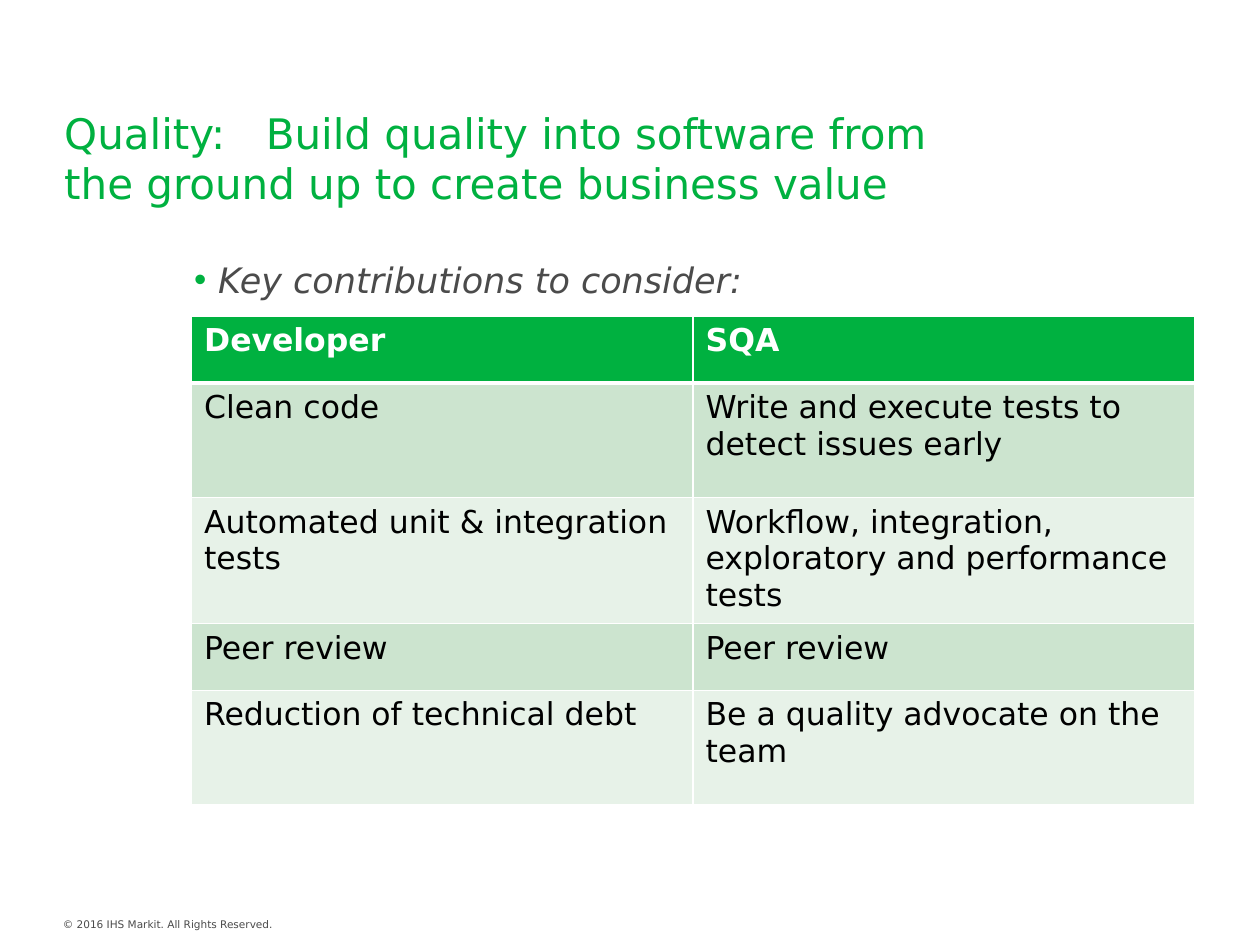
from dataclasses import dataclass

from lxml import etree
from pptx import Presentation
from pptx.dml.color import RGBColor
from pptx.enum.text import MSO_ANCHOR, MSO_AUTO_SIZE, PP_ALIGN
from pptx.oxml.ns import qn
from pptx.util import Inches, Pt

TOP = MSO_ANCHOR.TOP
NO_FIT = MSO_AUTO_SIZE.NONE
LEFT = PP_ALIGN.LEFT


@dataclass(frozen=True)
class Theme:
    font: str = "DejaVu Sans"
    green: str = "00B140"
    gray: str = "4B4B4B"
    white: str = "FFFFFF"
    black: str = "000000"
    bands: tuple = ("CCE4CF", "E7F2E8")
    title_size: int = 24
    body_size: int = 20
    table_size: int = 18
    footer_size: int = 6
    rule: int = 1
    header_rule: int = 3


THEME = Theme()

ROWS = [
    ("Developer", "SQA"),
    ("Clean code", "Write and execute tests to detect issues early"),
    ("Automated unit & integration tests",
     "Workflow, integration, exploratory and performance tests"),
    ("Peer review", "Peer review"),
    ("Reduction of technical debt", "Be a quality advocate on the team"),
]
ROW_HEIGHTS = (0.53, 0.91, 0.91, 0.53, 0.91)


def style(paragraph, size, color, bold=False, italic=False):
    paragraph.alignment = LEFT
    font = paragraph.font
    font.name = THEME.font
    font.size = Pt(size)
    font.color.rgb = RGBColor.from_string(color)
    font.bold = bold
    font.italic = italic


def place(shape, box):
    shape.left, shape.top, shape.width, shape.height = map(Inches, box)


def fill_placeholder(shape, box, text):
    place(shape, box)
    frame = shape.text_frame
    frame.margin_left = frame.margin_right = 0
    frame.margin_top = frame.margin_bottom = 0
    frame.vertical_anchor = TOP
    frame.word_wrap = True
    frame.auto_size = NO_FIT
    frame.text = text
    paragraph = frame.paragraphs[0]
    paragraph.space_before = Pt(0)
    return paragraph


def add_title(page, box):
    paragraph = fill_placeholder(
        page.shapes.title, box,
        "Quality:\tBuild quality into software from the ground up to create business value")
    properties = paragraph._p.get_or_add_pPr()
    stops = etree.SubElement(properties, qn("a:tabLst"))
    etree.SubElement(stops, qn("a:tab"), pos=str(Inches(1.6)), algn="l")
    style(paragraph, THEME.title_size, THEME.green)


def add_lead(page, box):
    paragraph = fill_placeholder(
        page.placeholders[1], box, "Key contributions to consider:")
    properties = paragraph._p.get_or_add_pPr()
    indent = Inches(0.19)
    properties.set("marL", str(indent))
    properties.set("indent", str(-indent))
    color = etree.SubElement(properties, qn("a:buClr"))
    etree.SubElement(color, qn("a:srgbClr"), val=THEME.green)
    etree.SubElement(properties, qn("a:buChar"), char="•")
    style(paragraph, THEME.body_size, THEME.gray, italic=True)


def add_borders(cell, top, bottom):
    properties = cell._tc.get_or_add_tcPr()
    widths = {"L": THEME.rule, "R": THEME.rule, "T": top, "B": bottom}
    for side, width in widths.items():
        line = etree.SubElement(properties, qn(f"a:ln{side}"), w=str(Pt(width)))
        fill = etree.SubElement(line, qn("a:solidFill"))
        etree.SubElement(fill, qn("a:srgbClr"), val=THEME.white)


def add_contributions(page, box):
    frame = page.shapes.add_table(len(ROWS), len(ROWS[0]), *map(Inches, box))
    table = frame.table
    table.horz_banding = False
    for row, height in zip(table.rows, ROW_HEIGHTS):
        row.height = Inches(height)
    for index, texts in enumerate(ROWS):
        header = index == 0
        fill = THEME.green if header else THEME.bands[(index - 1) % 2]
        top = THEME.header_rule if index == 1 else THEME.rule
        bottom = THEME.header_rule if header else THEME.rule
        for column, text in enumerate(texts):
            cell = table.cell(index, column)
            add_borders(cell, top, bottom)
            cell.fill.solid()
            cell.fill.fore_color.rgb = RGBColor.from_string(fill)
            cell.text = text
            style(cell.text_frame.paragraphs[0], THEME.table_size,
                  THEME.white if header else THEME.black, bold=header)


def add_footer(page, box):
    frame = page.shapes.add_textbox(*map(Inches, box)).text_frame
    frame.word_wrap = False
    frame.text = "© 2016 IHS Markit. All Rights Reserved."
    style(frame.paragraphs[0], THEME.footer_size, THEME.gray)


def main():
    deck = Presentation()
    deck.slide_width, deck.slide_height = Inches(10), Inches(7.5)
    page = deck.slides.add_slide(deck.slide_layouts[1])
    add_footer(page, (0.4, 7.24, 1.92, 0.2))
    add_title(page, (0.51, 0.85, 7.24, 0.81))
    add_lead(page, (1.54, 2.05, 5.2, 4.65))
    add_contributions(page, (1.52, 2.51, 7.96, sum(ROW_HEIGHTS)))
    deck.save("out.pptx")


if __name__ == "__main__":
    main()
